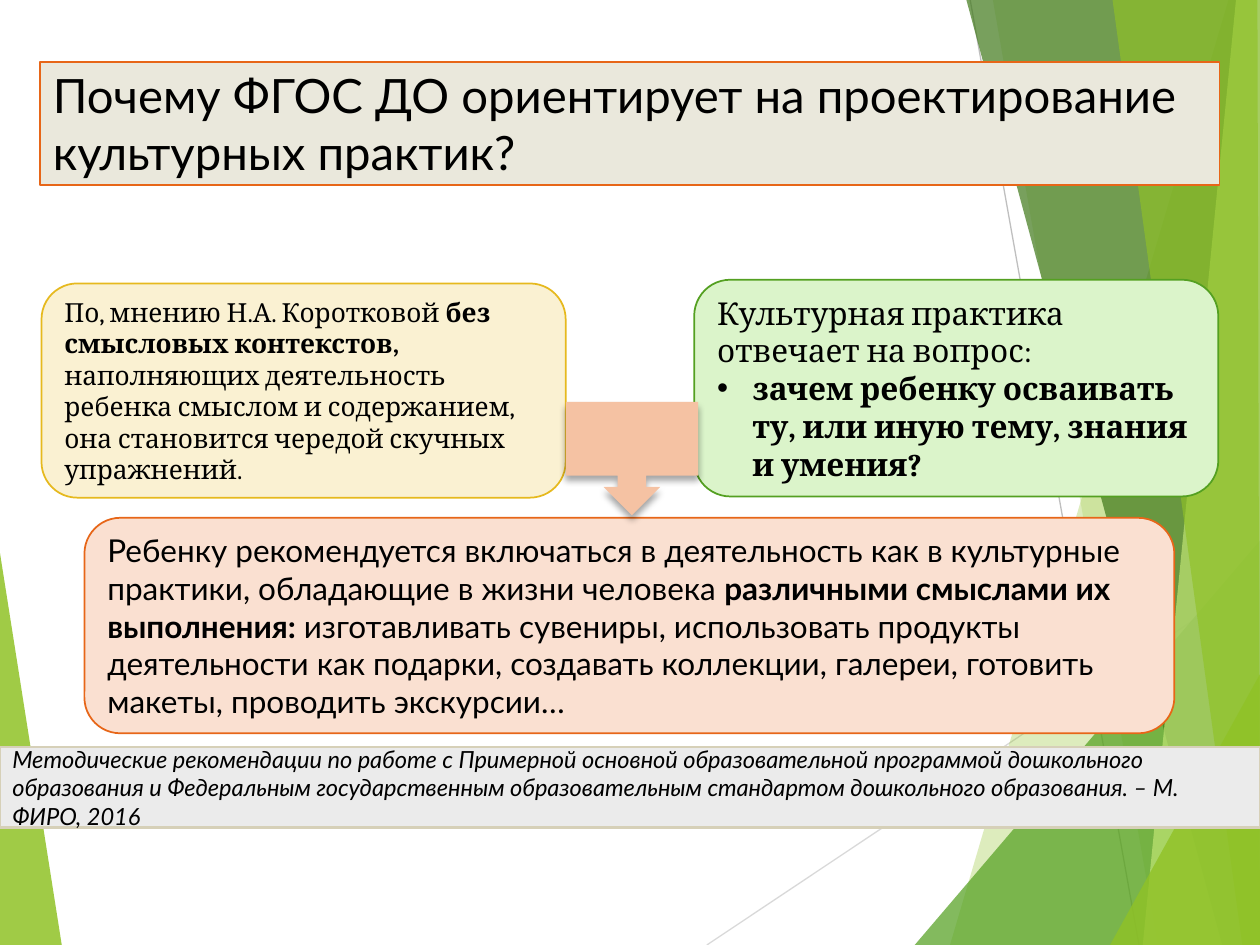
from dataclasses import dataclass

from lxml import etree
from pptx import Presentation
from pptx import util as u
from pptx.dml.color import RGBColor
from pptx.enum import shapes, text
from pptx.oxml import ns

BLACK = RGBColor(0x00, 0x00, 0x00)
LIME = RGBColor(0x90, 0xC2, 0x26)
PALE_LIME = RGBColor(0xC0, 0xE4, 0x74)
GREEN = RGBColor(0x54, 0xA0, 0x21)
DARK_GREEN = RGBColor(0x3F, 0x78, 0x19)
LIGHT_GRAY = RGBColor(0xD9, 0xD9, 0xD9)
GRAY = RGBColor(0xBF, 0xBF, 0xBF)
ORANGE = RGBColor(0xE7, 0x66, 0x18)
GOLD = RGBColor(0xE6, 0xB9, 0x1E)
BEIGE = RGBColor(0xEA, 0xE8, 0xDC)
SAND = RGBColor(0xD6, 0xD0, 0xB8)
CREAM = RGBColor(0xFA, 0xF1, 0xD2)
MINT = RGBColor(0xDB, 0xF4, 0xCA)
PEACH = RGBColor(0xFA, 0xE0, 0xD1)
SALMON = RGBColor(0xF5, 0xC2, 0xA3)
SMOKE = RGBColor(0xEB, 0xEB, 0xEB)

RECT = shapes.MSO_SHAPE.RECTANGLE
ROUND = shapes.MSO_SHAPE.ROUNDED_RECTANGLE


@dataclass
class Facet:
    points: list[tuple[float, float]]
    color: RGBColor
    opacity: int


@dataclass
class Run:
    text: str
    bold: bool = False


@dataclass
class Paragraph:
    runs: list[Run]
    bullet: bool = False


@dataclass
class Panel:
    kind: shapes.MSO_SHAPE
    box: tuple[float, float, float, float]
    fill: RGBColor
    border: RGBColor
    font: str
    size: float
    paragraphs: list[Paragraph]
    italic: bool = False
    width: float = 1


FACETS = [
    Facet([(0, 4.39), (0.49, 7.5), (0, 7.5)], LIME, 85),
    Facet([(9.75, 0), (7.54, 7.5), (10, 7.5), (10, 0)], LIME, 30),
    Facet([(7.88, 0), (9.19, 7.5), (10, 7.5), (10, 0)], LIME, 20),
    Facet([(7.26, 7.5), (10, 4.29), (10, 7.5)], GREEN, 72),
    Facet([(7.67, 0), (9.7, 7.5), (10, 7.5), (10, 0)], DARK_GREEN, 70),
    Facet([(9.81, 0), (9.07, 7.5), (10, 7.5), (10, 0)], PALE_LIME, 70),
    Facet([(8.83, 0), (9.86, 7.5), (10, 7.5), (9.98, 0)], LIME, 65),
    Facet([(8.81, 7.5), (10, 5.35), (10, 7.5)], LIME, 80),
]

TITLE = Panel(RECT, (0.32, 0.49, 9.36, 0.98), BEIGE, ORANGE, "Lato", 27, [Paragraph([
    Run("Почему ФГОС ДО ориентирует на проектирование культурных практик?")])])

PANELS = [
    Panel(ROUND, (0.33, 2.25, 4.16, 1.7), CREAM, GOLD, "Cambria", 15, [Paragraph([
        Run("По, мнению Н.А. Коротковой "),
        Run("без смысловых контекстов,", True),
        Run(" наполняющих деятельность ребенка смыслом и содержанием, "
            "она становится чередой скучных упражнений.")])]),
    Panel(ROUND, (5.51, 2.22, 4.16, 1.72), MINT, GREEN, "Cambria", 18, [
        Paragraph([Run("Культурная практика отвечает на вопрос:")]),
        Paragraph([Run("зачем ребенку осваивать ту, или иную тему, "
                       "знания и умения?", True)], bullet=True)]),
    Panel(ROUND, (0.67, 4.11, 8.65, 1.71), PEACH, ORANGE, "Lato", 18, [Paragraph([
        Run("Ребенку рекомендуется включаться в деятельность как в культурные "
            "практики, обладающие в жизни человека "),
        Run("различными смыслами их выполнения: ", True),
        Run("изготавливать сувениры, использовать продукты деятельности как подарки, "
            "создавать коллекции, галереи, готовить макеты, проводить экскурсии…")])]),
]

SOURCE = Panel(RECT, (0, 5.93, 10, 0.64), SMOKE, SAND, "Lato", 13.5, [Paragraph([
    Run("Методические рекомендации по работе с Примерной основной образовательной "
        "программой дошкольного образования и Федеральным государственным "
        "образовательным стандартом дошкольного образования. – М. ФИРО, 2016")])],
    italic=True, width=1.5)


def add_child(parent, tag: str, **attrs):
    child = etree.SubElement(parent, ns.qn(tag))
    for name, value in attrs.items():
        child.set(name, str(value))
    return child


def draw_line(s, start: tuple[float, float], end: tuple[float, float], color: RGBColor) -> None:
    line = s.shapes.add_connector(shapes.MSO_CONNECTOR.STRAIGHT,
                                  *(u.Inches(v) for v in start + end))
    line.line.color.rgb = color
    line.line.width = u.Pt(0.75)
    add_child(line._element.spPr, "a:effectLst")


def draw_facet(s, facet: Facet) -> None:
    points = [(u.Inches(x), u.Inches(y)) for x, y in facet.points]
    builder = s.shapes.build_freeform(*points[0])
    builder.add_line_segments(points[1:], close=True)
    sp = builder.convert_to_shape()
    sp.shadow.inherit = False
    sp.line.fill.background()
    sp.fill.solid()
    sp.fill.fore_color.rgb = facet.color
    color = sp._element.spPr.find(".//" + ns.qn("a:srgbClr"))
    add_child(color, "a:alpha", val=facet.opacity * 1000)


def add_bullet(p) -> None:
    pPr = p._p.get_or_add_pPr()
    indent = u.Inches(0.28)
    pPr.set("marL", str(indent))
    pPr.set("indent", str(-indent))
    add_child(pPr, "a:buFont", typeface="Arial")
    add_child(pPr, "a:buChar", char="•")


def format_panel(sp, panel: Panel) -> None:
    sp.left, sp.top, sp.width, sp.height = (u.Inches(v) for v in panel.box)
    sp.fill.solid()
    sp.fill.fore_color.rgb = panel.fill
    sp.line.color.rgb = panel.border
    sp.line.width = u.Pt(panel.width)
    tf = sp.text_frame
    tf.word_wrap = True
    tf.auto_size = text.MSO_AUTO_SIZE.NONE
    tf.vertical_anchor = text.MSO_ANCHOR.MIDDLE
    for i, paragraph in enumerate(panel.paragraphs):
        p = tf.add_paragraph() if i else tf.paragraphs[0]
        p.alignment = text.PP_ALIGN.LEFT
        if paragraph.bullet:
            add_bullet(p)
        for run in paragraph.runs:
            r = p.add_run()
            r.text = run.text
            r.font.name = panel.font
            r.font.size = u.Pt(panel.size)
            r.font.bold = run.bold
            r.font.italic = panel.italic
            r.font.color.rgb = BLACK


def draw_panel(s, panel: Panel) -> None:
    sp = s.shapes.add_shape(panel.kind, *(u.Inches(v) for v in panel.box))
    sp.shadow.inherit = False
    format_panel(sp, panel)


def draw_callout(s) -> None:
    sp = s.shapes.add_shape(shapes.MSO_SHAPE.DOWN_ARROW_CALLOUT,
                            *(u.Inches(v) for v in (4.49, 3.19, 1.05, 0.9)))
    sp.fill.solid()
    sp.fill.fore_color.rgb = SALMON
    sp.line.fill.background()
    effects = add_child(sp._element.spPr, "a:effectLst")
    shadow = add_child(effects, "a:outerShdw", blurRad=u.Pt(4), dist=u.Pt(3),
                       dir=90 * 60000, rotWithShape=0)
    color = add_child(shadow, "a:srgbClr", val=BLACK)
    add_child(color, "a:alpha", val=35000)


def main() -> None:
    prs = Presentation()
    prs.slide_width, prs.slide_height = u.Inches(10), u.Inches(7.5)
    s = prs.slides.add_slide(prs.slide_layouts[5])
    draw_facet(s, FACETS[0])
    draw_line(s, (5.61, 7.5), (10, 4.57), LIGHT_GRAY)
    draw_line(s, (7.7, 0), (9.04, 7.5), GRAY)
    for facet in FACETS[1:]:
        draw_facet(s, facet)
    title = s.shapes.title
    format_panel(title, TITLE)
    s.shapes._spTree.append(title._element)
    for panel in PANELS:
        draw_panel(s, panel)
    draw_callout(s)
    draw_panel(s, SOURCE)
    prs.save("out.pptx")


if __name__ == "__main__":
    main()
